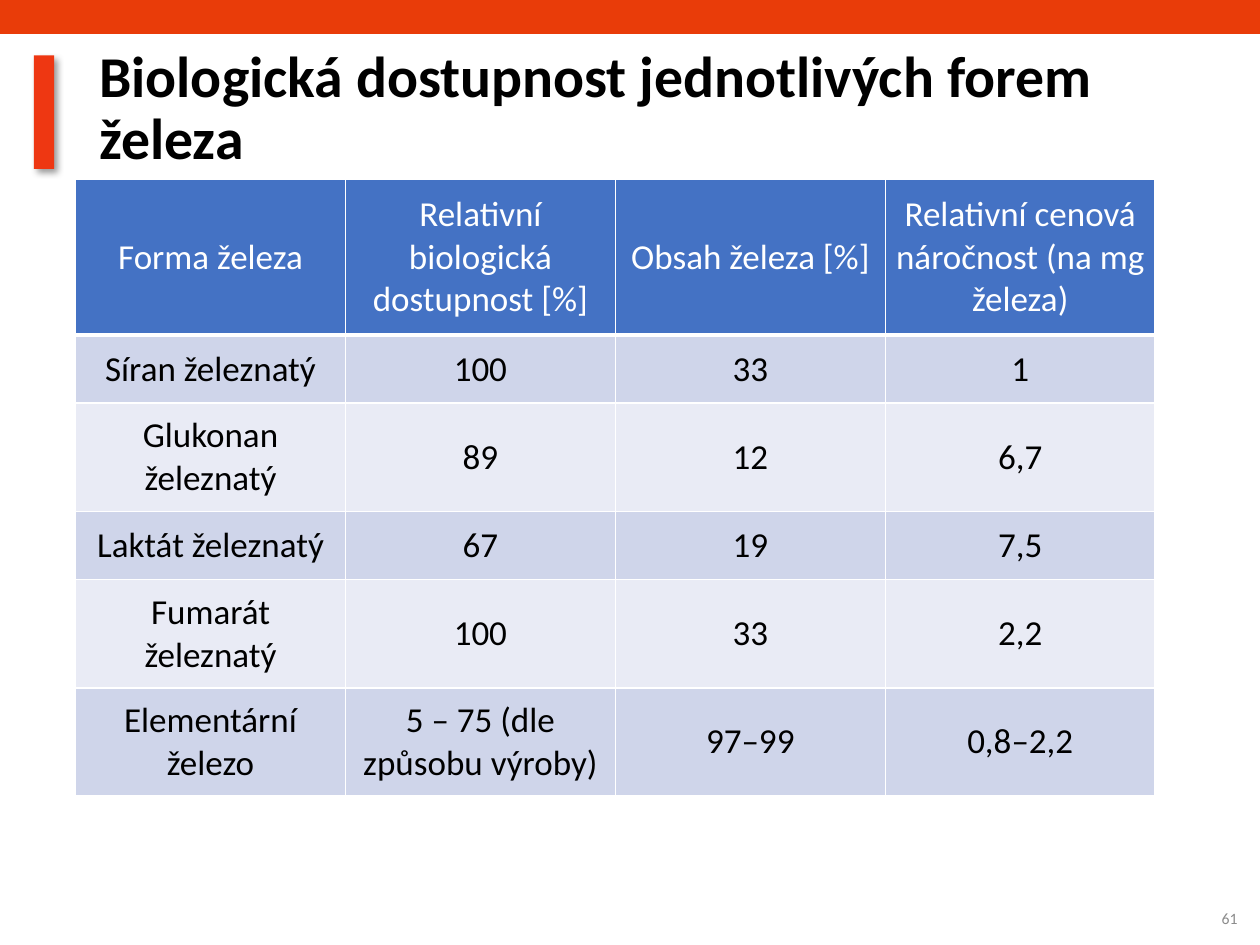
from dataclasses import dataclass

import pptx
import pptx.dml.color
import pptx.enum.shapes
import pptx.enum.text
import pptx.oxml
import pptx.oxml.ns
import pptx.util
from pptx.util import Inches

FONT = "Calibri"
BLACK, WHITE, GREY = "000000", "FFFFFF", "8C8C8C"
HEADER_FILL = "4472C4"
BAND_FILLS = ("CFD5EA", "E9EBF5")
COLUMN_WIDTH = 8.57 / 4
ROW_HEIGHTS = (1.24, 0.54, 0.86, 0.54, 0.86, 0.86)
ROWS = (
    ("Forma železa", "Relativní biologická dostupnost [%]", "Obsah železa [%]",
     "Relativní cenová náročnost (na mg železa)"),
    ("Síran železnatý", "100", "33", "1"),
    ("Glukonan železnatý", "89", "12", "6,7"),
    ("Laktát železnatý", "67", "19", "7,5"),
    ("Fumarát železnatý", "100", "33", "2,2"),
    ("Elementární železo", "5 – 75 (dle způsobu výroby)", "97–99", "0,8–2,2"),
)
ALIGN = pptx.enum.text.PP_ALIGN
MIDDLE = pptx.enum.text.MSO_ANCHOR.MIDDLE


@dataclass
class Area:
    left: float
    top: float
    width: float
    height: float

    def lengths(self) -> tuple:
        return tuple(Inches(n) for n in (self.left, self.top, self.width, self.height))


@dataclass
class TextStyle:
    size: float
    color: str
    align: ALIGN
    bold: bool = False
    line_spacing: float = 1.0


def rgb(value: str) -> pptx.dml.color.RGBColor:
    return pptx.dml.color.RGBColor.from_string(value)


def write(frame, text: str, style: TextStyle) -> None:
    frame.text = text
    frame.word_wrap = True
    para = frame.paragraphs[0]
    para.alignment = style.align
    para.line_spacing = style.line_spacing
    font = para.runs[0].font
    font.name = FONT
    font.size = pptx.util.Pt(style.size)
    font.bold = style.bold
    font.color.rgb = rgb(style.color)


def add_text(page, area: Area, text: str, style: TextStyle) -> None:
    box = page.shapes.add_textbox(*area.lengths())
    box.text_frame.vertical_anchor = MIDDLE
    write(box.text_frame, text, style)


def add_bar(page, area: Area, color: str):
    bar = page.shapes.add_shape(pptx.enum.shapes.MSO_SHAPE.RECTANGLE, *area.lengths())
    bar.shadow.inherit = False
    bar.fill.solid()
    bar.fill.fore_color.rgb = rgb(color)
    bar.line.fill.background()
    return bar


def add_shadow(shape) -> None:
    """Put a soft black shadow below and to the right of the shape."""
    effects = shape._element.spPr.find(pptx.oxml.ns.qn("a:effectLst"))
    effects.append(pptx.oxml.parse_xml(
        f'<a:outerShdw {pptx.oxml.ns.nsdecls("a")} blurRad="50800" dist="38100" '
        'dir="2700000" algn="tl" rotWithShape="0"><a:srgbClr val="000000">'
        '<a:alpha val="40000"/></a:srgbClr></a:outerShdw>'))


def add_borders(cell, bottom: float) -> None:
    """Draw white cell borders, 1 pt except for the given bottom width."""
    properties = cell._tc.get_or_add_tcPr()
    for side, width in (("L", 1), ("R", 1), ("T", 1), ("B", bottom)):
        properties.append(pptx.oxml.parse_xml(
            f'<a:ln{side} {pptx.oxml.ns.nsdecls("a")} w="{pptx.util.Pt(width)}">'
            f'<a:solidFill><a:srgbClr val="{WHITE}"/></a:solidFill></a:ln{side}>'))


def add_iron_table(page) -> None:
    area = Area(0.6, 1.42, 4 * COLUMN_WIDTH, sum(ROW_HEIGHTS))
    table = page.shapes.add_table(len(ROWS), 4, *area.lengths()).table
    for column in table.columns:
        column.width = Inches(COLUMN_WIDTH)
    for index, (texts, height) in enumerate(zip(ROWS, ROW_HEIGHTS)):
        table.rows[index].height = Inches(height)
        is_header = index == 0
        fill = HEADER_FILL if is_header else BAND_FILLS[(index - 1) % 2]
        style = TextStyle(20, WHITE if is_header else BLACK, ALIGN.CENTER)
        for cell, text in zip(table.rows[index].cells, texts):
            write(cell.text_frame, text, style)
            cell.vertical_anchor = MIDDLE
            cell.margin_left = cell.margin_right = Inches(0.07)
            cell.margin_top = cell.margin_bottom = Inches(0.04)
            add_borders(cell, bottom=3 if is_header else 1)
            cell.fill.solid()
            cell.fill.fore_color.rgb = rgb(fill)


def main() -> None:
    deck = pptx.Presentation()
    deck.slide_width, deck.slide_height = Inches(10), Inches(7.5)
    page = deck.slides.add_slide(deck.slide_layouts[6])
    add_bar(page, Area(0, 0, 10, 0.27), "E93C09")
    add_shadow(add_bar(page, Area(0.27, 0.44, 0.16, 0.9), "EE3712"))
    add_text(page, Area(0.69, 0.4, 9.01, 0.94),
             "Biologická dostupnost jednotlivých forem železa",
             TextStyle(33, BLACK, ALIGN.LEFT, bold=True, line_spacing=0.9))
    add_iron_table(page)
    add_text(page, Area(7.67, 7.09, 2.25, 0.4), "61", TextStyle(9, GREY, ALIGN.RIGHT))
    deck.save("out.pptx")


if __name__ == "__main__":
    main()
